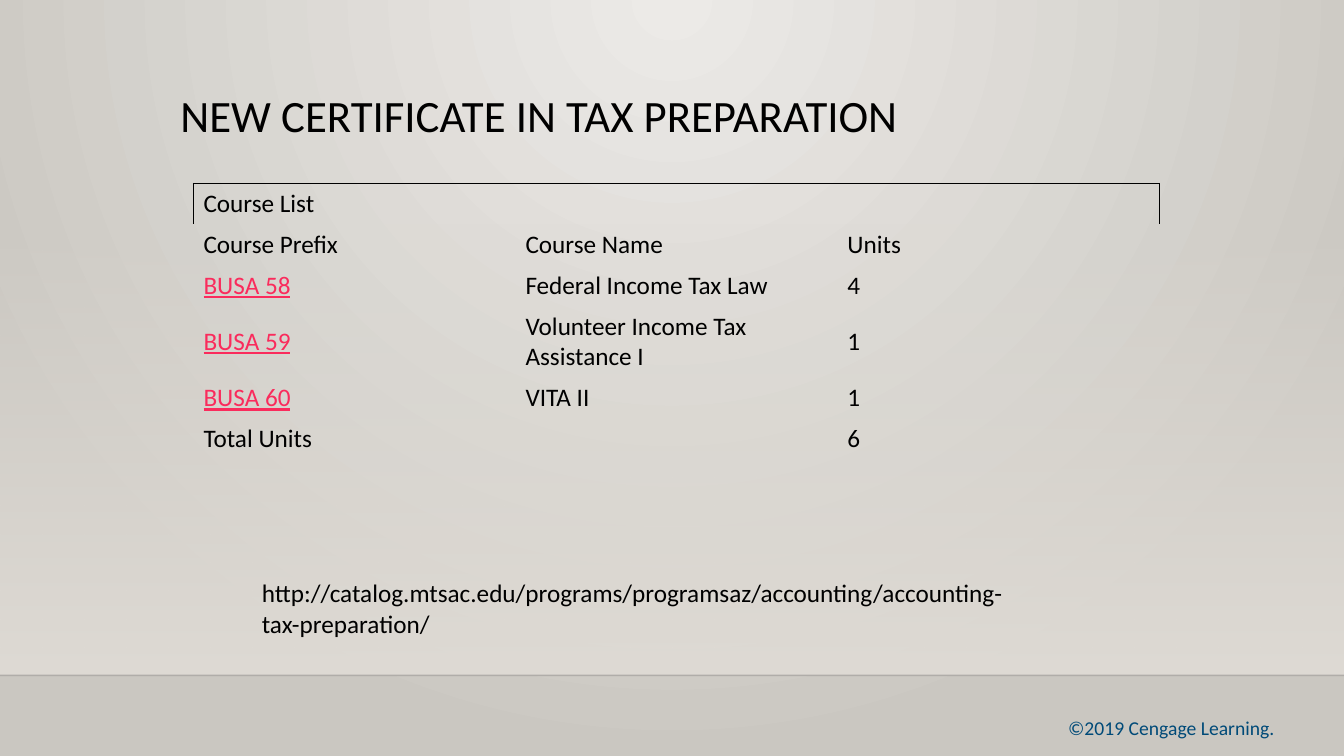
from dataclasses import dataclass

from lxml.etree import SubElement
from pptx import Presentation
from pptx.dml.color import RGBColor
from pptx.enum.shapes import MSO_CONNECTOR, MSO_SHAPE
from pptx.enum.text import MSO_ANCHOR, PP_ALIGN
from pptx.oxml import parse_xml
from pptx.oxml.ns import nsdecls, qn
from pptx.util import Pt


@dataclass(frozen=True)
class Theme:
    """Colours, font and type sizes of the slide."""
    font: str = "Calibri"
    ink: str = "000000"
    link: str = "FA2B5C"
    copyright: str = "004A78"
    center: str = "ECEAE7"
    edge: str = "CAC7C1"
    floor: str = "DFDBD5"
    rule: str = "000001"
    title_size: float = 32
    body_size: float = 18
    footer_size: float = 14


THEME = Theme()
WIDTH, HEIGHT = 960, 540
FLOOR_TOP, FLOOR_BOTTOM = 159, 482.4
COURSES = [
    ["Course List", "", ""],
    ["Course Prefix", "Course Name", "Units"],
    ["BUSA 58", "Federal Income Tax Law", "4"],
    ["BUSA 59", "Volunteer Income Tax Assistance I", "1"],
    ["BUSA 60", "VITA II", "1"],
    ["Total Units", "", "6"],
]
LINK_ROWS = range(2, 5)
ROW_HEIGHTS = [29.2, 29.2, 29.2, 51.2, 29.2, 29.2]
HEADER_BORDERS = ["LRTB", "T", "TR"]


def apply_format(target, values):
    """Set every attribute named in values on the target."""
    for name, value in values.items():
        setattr(target, name, value)


def set_gradient(fill, element, stops, direction):
    """Give a fill a gradient of (position, colour, opacity) stops."""
    fill.gradient()
    gradient = next(element.iter(qn("a:gradFill")))
    stop_xml = "".join(
        f'<a:gs pos="{position * 1000}"><a:srgbClr val="{color}">'
        f'<a:alpha val="{opacity * 1000}"/></a:srgbClr></a:gs>'
        for position, color, opacity in stops)
    gradient.getparent().replace(gradient, parse_xml(
        f'<a:gradFill {nsdecls("a")} rotWithShape="1">'
        f'<a:gsLst>{stop_xml}</a:gsLst>{direction}</a:gradFill>'))


def write_text(frame, text, size, color, underline=False, **paragraph_format):
    """Write one formatted paragraph into a text frame."""
    paragraph = frame.paragraphs[0]
    apply_format(paragraph, paragraph_format)
    run = paragraph.add_run()
    run.text = text
    apply_format(run.font, {"name": THEME.font, "size": Pt(size), "underline": underline})
    run.font.color.rgb = RGBColor.from_string(color)


def add_text(slide, box, text, size, color, frame_format, **paragraph_format):
    """Add a wrapping text box."""
    frame = slide.shapes.add_textbox(*map(Pt, box)).text_frame
    apply_format(frame, {"word_wrap": True, **frame_format})
    write_text(frame, text, size, color, **paragraph_format)


def add_backdrop(slide, box):
    """Add the radial background, the fading panel and its lower rule."""
    left, top, width, height = box
    set_gradient(slide.background.fill, slide.element,
                 [(0, THEME.center, 100), (100, THEME.edge, 100)],
                 '<a:path path="circle"><a:fillToRect l="43000" t="0" r="43000" b="100000"/></a:path>')
    panel = slide.shapes.add_shape(MSO_SHAPE.RECTANGLE, *map(Pt, (left, top, width, height)))
    panel.shadow.inherit = False
    panel.line.fill.background()
    set_gradient(panel.fill, panel.element,
                 [(0, THEME.floor, 0), (100, THEME.floor, 100)],
                 '<a:lin ang="5400000" scaled="0"/>')
    bottom = top + height
    rule = slide.shapes.add_connector(
        MSO_CONNECTOR.STRAIGHT, *map(Pt, (left, bottom, left + width, bottom)))
    rule.line.width = Pt(1)
    rule.line.color.rgb = RGBColor.from_string(THEME.rule)
    color = next(rule.element.iter(qn("a:srgbClr")))
    SubElement(color, qn("a:alpha"), val="20000")
    SubElement(rule.element.spPr, qn("a:effectLst"))


def set_borders(cell, sides):
    """Draw the named sides of a cell and clear the others."""
    properties = cell._tc.get_or_add_tcPr()
    for position, side in enumerate("LRTB"):
        paint = (f'<a:solidFill><a:srgbClr val="{THEME.ink}"/></a:solidFill>'
                 if side in sides else "<a:noFill/>")
        properties.insert(position, parse_xml(
            f'<a:ln{side} {nsdecls("a")} w="12700">{paint}</a:ln{side}>'))


def add_course_table(slide, box):
    """Add the course table with a framed heading row."""
    left, top, width = box
    table = slide.shapes.add_table(
        len(COURSES), len(COURSES[0]), *map(Pt, (left, top, width, sum(ROW_HEIGHTS)))).table
    apply_format(table, {"first_row": False, "horz_banding": False})
    for column in table.columns:
        column.width = Pt(width / len(COURSES[0]))
    for row, height in zip(table.rows, ROW_HEIGHTS):
        row.height = Pt(height)
    for row_index, texts in enumerate(COURSES):
        for column_index, text in enumerate(texts):
            cell = table.cell(row_index, column_index)
            cell.vertical_anchor = MSO_ANCHOR.MIDDLE
            cell.fill.background()
            set_borders(cell, HEADER_BORDERS[column_index] if row_index == 0 else "")
            is_link = row_index in LINK_ROWS and column_index == 0
            if text:
                write_text(cell.text_frame, text, THEME.body_size,
                           THEME.link if is_link else THEME.ink, is_link)
    table.cell(0, 0).merge(table.cell(0, 2))
    table.cell(5, 0).merge(table.cell(5, 1))


def build_slide(slide):
    """Place all regions of the certificate slide."""
    add_backdrop(slide, (0, FLOOR_TOP, WIDTH, FLOOR_BOTTOM - FLOOR_TOP))
    add_text(slide, (227.5, 496, 693.4, 36), "©2019 Cengage Learning.",
             THEME.footer_size, THEME.copyright,
             {"vertical_anchor": MSO_ANCHOR.BOTTOM, "margin_right": Pt(10.4)},
             alignment=PP_ALIGN.RIGHT)
    add_text(slide, (114.5, 63.4, 756, 82.8), "NEW CERTIFICATE IN TAX PREPARATION",
             THEME.title_size, THEME.ink, {"margin_left": Pt(14.4)}, line_spacing=0.9)
    add_course_table(slide, (138.2, 131, 690))
    add_text(slide, (180, 409, 552.2, 51),
             "http://catalog.mtsac.edu/programs/programsaz/accounting/accounting-tax-preparation/",
             THEME.body_size, THEME.ink, {})


def main():
    """Create and save the presentation."""
    presentation = Presentation()
    apply_format(presentation, {"slide_width": Pt(WIDTH), "slide_height": Pt(HEIGHT)})
    build_slide(presentation.slides.add_slide(presentation.slide_layouts[6]))
    presentation.save("out.pptx")


if __name__ == "__main__":
    main()
